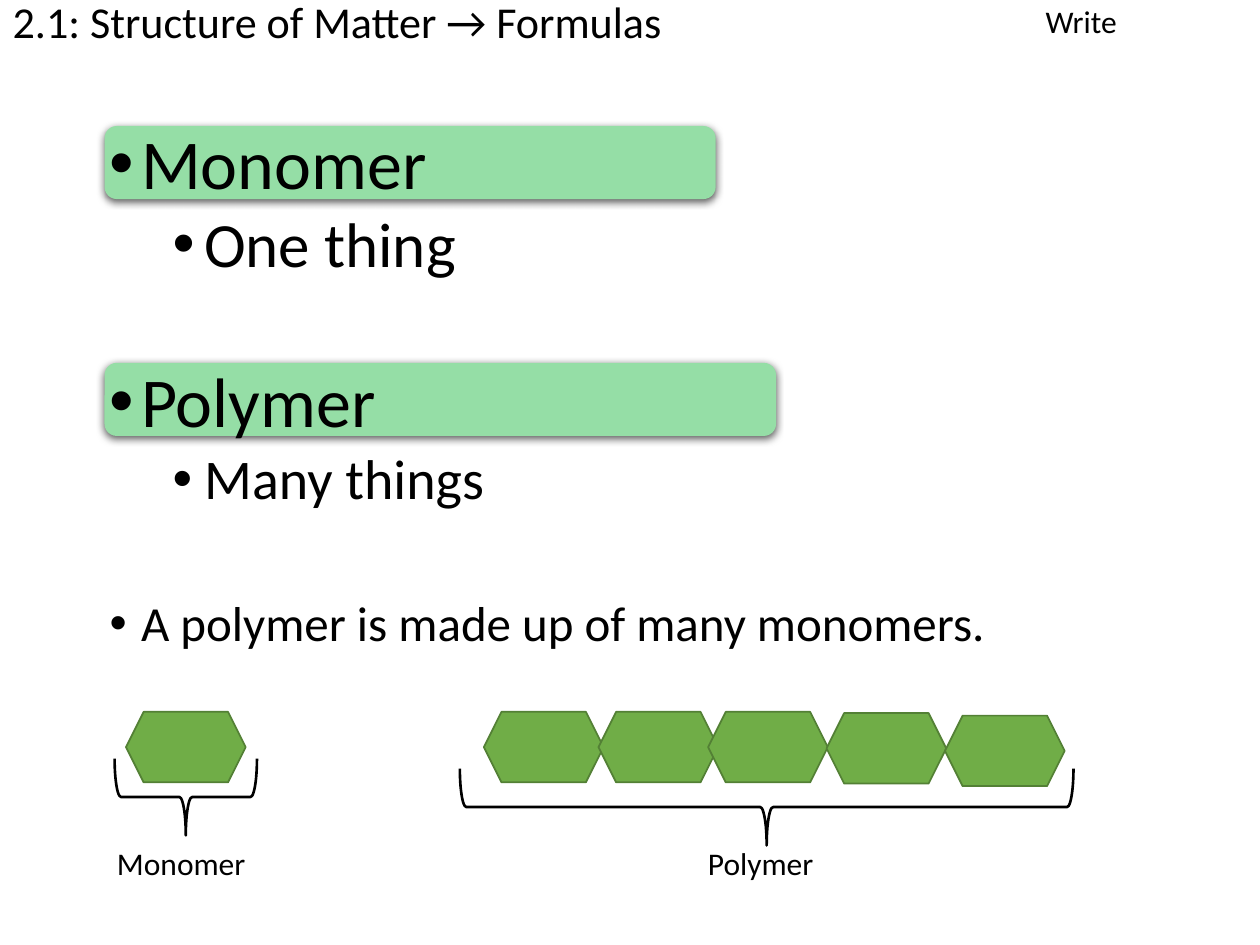
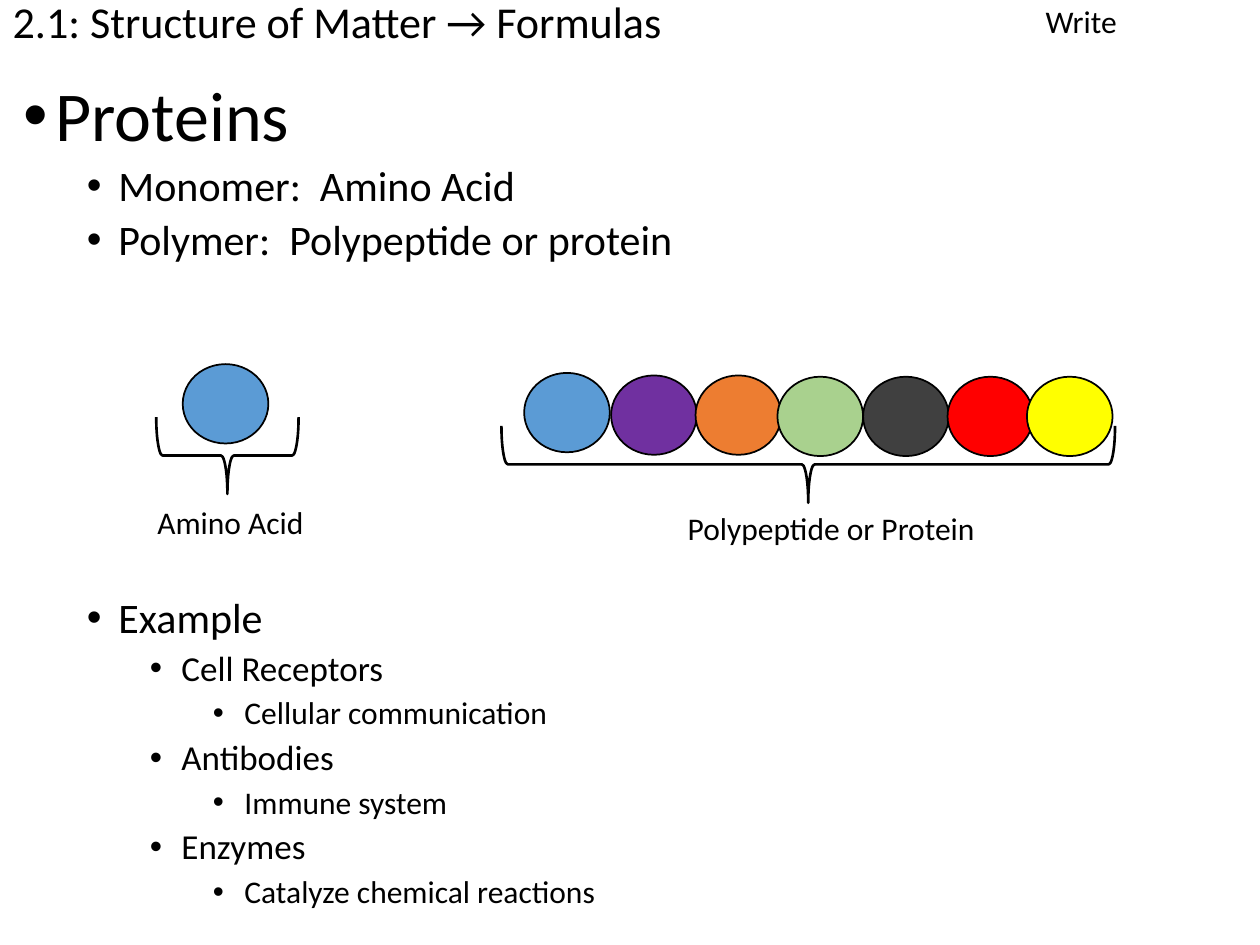
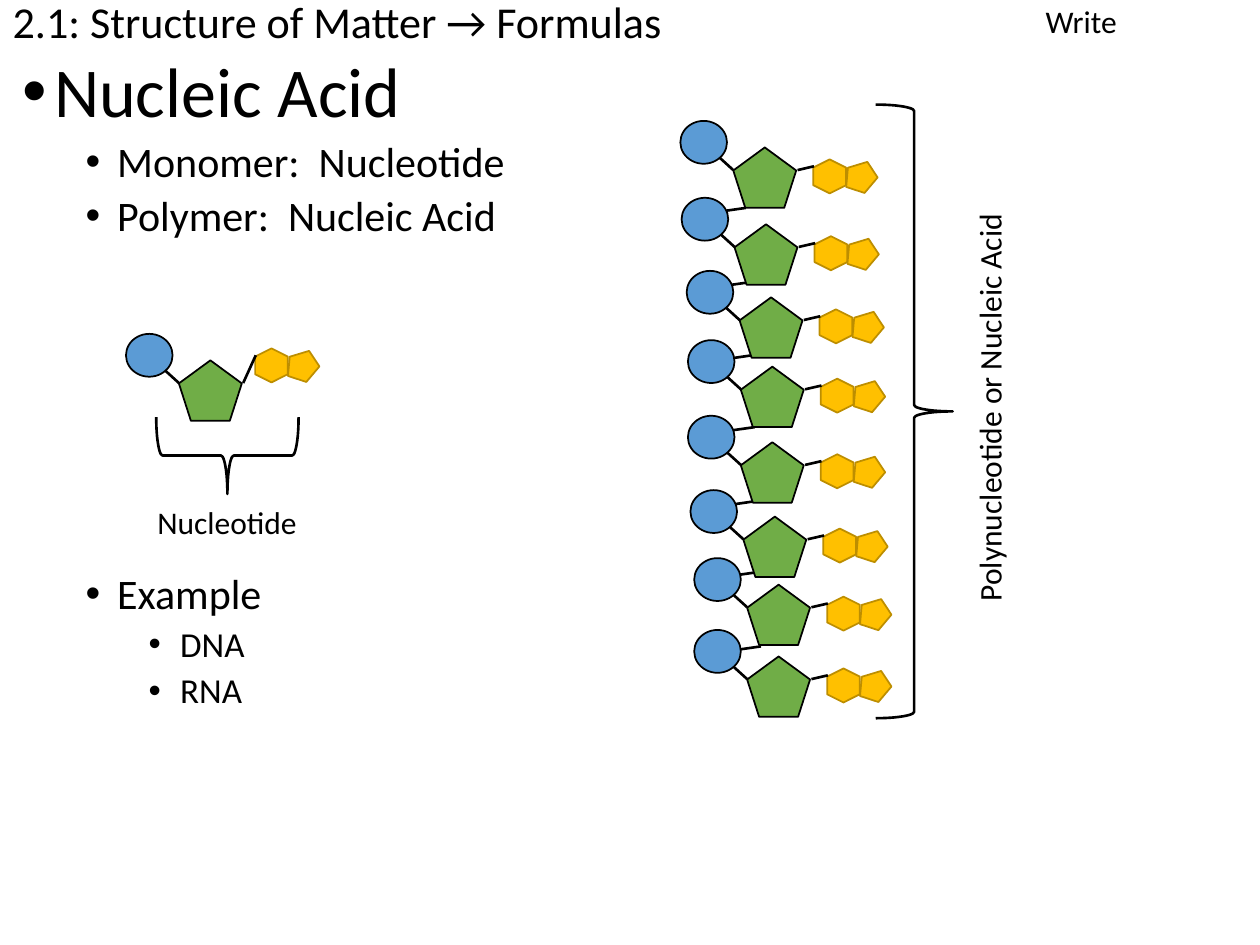
from lxml import etree
from pptx import Presentation
from pptx import util as u
from pptx.dml.color import RGBColor
from pptx.enum import shapes, text
from pptx.oxml import ns

# Shared style: 100 px to the inch
PX = 9144
FONT = "Calibri"
BLACK, MINT, GREEN, DARK_GREEN = "000000", "95DEA6", "70AD47", "538035"
BLUE, GOLD, DARK_GOLD = "5B9BD5", "FFC000", "BD8E00"
SHAPE = shapes.MSO_SHAPE
TITLE = "2.1: Structure of Matter → Formulas"
TITLE_BOX = (0, 0, 862, 38)
NOTE, NOTE_BOX = "Write", (820, -3, 227, 40)

# Lists: level, size, text, space before
BODIES = [
    ((77, 97, 891, 640), [
        (0, 40, "Monomer", 10),
        (1, 36, "One thing", 5),
        (0, 40, "Polymer", 49),
        (1, 32, "Many things", 5),
        (0, 28, "A polymer is made up of many monomers.", 50),
    ]),
    ((9, 59, 959, 678), [
        (0, 40, "Proteins", 10),
        (1, 24, "Monomer:  Amino Acid", 5),
        (1, 24, "Polymer:  Polypeptide or protein", 5),
        (1, 24, "Example", 190),
        (2, 20, "Cell Receptors", 5),
        (3, 18, "Cellular communication", 5),
        (2, 20, "Antibodies", 5),
        (3, 18, "Immune system", 5),
        (2, 20, "Enzymes", 5),
        (3, 18, "Catalyze chemical reactions", 5),
    ]),
    ((8, 40, 959, 678), [
        (0, 40, "Nucleic Acid", 10),
        (1, 24, "Monomer:  Nucleotide", 5),
        (1, 24, "Polymer:  Nucleic Acid", 5),
        (1, 24, "Example", 190),
        (2, 20, "DNA", 5),
        (2, 20, "RNA", 5),
    ]),
]

# Braces and their labels: box, rotation
BRACES = [
    [((117, 576, 61, 113), 270), ((578, 397, 61, 487), 270)],
    [((150, 305, 61, 113), 270), ((611, 125, 61, 487), 270)],
    [((150, 305, 61, 113), 270), ((695, 83, 61, 487), 180)],
]
LABELS = [
    [("Monomer", (83, 665, 178, 40), 0), ("Polymer", (552, 665, 178, 40), 0)],
    [("Amino Acid", (115, 394, 199, 40), 0),
     ("Polypeptide or Protein", (536, 399, 279, 40), 0)],
    [("Nucleotide", (115, 394, 199, 40), 0),
     ("Polynucleotide or Nucleic Acid", (607, 289, 356, 40), 270)],
]

# Diagram parts
HIGHLIGHTS = [(83, 288, 533, 58), (83, 100, 485, 58)]
HEXAGONS = [(100, 565), (384, 565), (475, 565), (562, 565), (656, 566), (750, 568)]
AMINO_ACIDS = [
    (145, 289, BLUE), (416, 296, BLUE), (485, 298, "7030A0"), (552, 298, "ED7D31"),
    (617, 299, "A9D18E"), (685, 299, "404040"), (752, 299, "FF0000"), (815, 299, "FFFF00"),
]
NUCLEOTIDES = [(540, 96), (541, 157), (545, 215), (546, 270),
               (546, 330), (548, 389), (551, 443), (551, 500)]
CHAIN_LINKS = [(592, 165), (595, 224), (597, 282), (599, 339),
               (605, 397), (602, 454), (604, 513)]


def color(value):
    return RGBColor.from_string(value)


def emu(lengths):
    return [u.Emu(length * PX) for length in lengths]


def place(shape, box):
    shape.left, shape.top, shape.width, shape.height = emu(box)


def write(paragraph, words, size=18, spacing=None, before=None):
    run = paragraph.add_run()
    run.text = words
    run.font.name, run.font.size = FONT, u.Pt(size)
    run.font.color.rgb = color(BLACK)
    if spacing:
        paragraph.line_spacing = spacing
    if before is not None:
        paragraph.space_before = u.Pt(before)


def set_bullet(paragraph, level):
    paragraph.level = level
    properties = paragraph._p.get_or_add_pPr()
    properties.set("marL", str((25 + 50 * level) * PX))
    properties.set("indent", str(-25 * PX))
    etree.SubElement(properties, ns.qn("a:buChar")).set("char", "•")


def add_label(slide, words, box, rotation=0):
    label = slide.shapes.add_textbox(*emu(box))
    label.rotation = rotation
    label.text_frame.word_wrap = True
    label.text_frame.auto_size = text.MSO_AUTO_SIZE.SHAPE_TO_FIT_TEXT
    write(label.text_frame.paragraphs[0], words)


def add_figure(parent, kind, box, fill=None, line=BLACK, width=1, rotation=0):
    shape = parent.shapes.add_shape(kind, *emu(box))
    shape.shadow.inherit = False
    shape.rotation = rotation
    if fill:
        shape.fill.solid()
        shape.fill.fore_color.rgb = color(fill)
    else:
        shape.fill.background()
    if line:
        shape.line.color.rgb = color(line)
        shape.line.width = u.Pt(width)
    else:
        shape.line.fill.background()
    return shape


def add_line(parent, start, end):
    line = parent.shapes.add_connector(shapes.MSO_CONNECTOR.STRAIGHT, *emu(start + end))
    line.line.color.rgb = color(BLACK)
    line.line.width = u.Pt(1.5)
    etree.SubElement(line.element.spPr, ns.qn("a:effectLst"))


def add_soft_shadow(shape):
    effects = shape.element.spPr.find(ns.qn("a:effectLst"))
    shadow = etree.SubElement(effects, ns.qn("a:outerShdw"), blurRad=str(u.Pt(4.5)),
                              dist=str(u.Pt(1.5)), dir="5400000", rotWithShape="0")
    shade = etree.SubElement(shadow, ns.qn("a:srgbClr"), val=BLACK)
    etree.SubElement(shade, ns.qn("a:alpha"), val="63000")


def add_nucleotide(slide, x, y, base=(105, 31)):
    """Phosphate, sugar and two-ring base; base is the offset of the first ring."""
    group = slide.shapes.add_group_shape()
    base_x, base_y = x + base[0], y + base[1]
    add_figure(group, SHAPE.OVAL, (x, y, 37, 34), BLUE)
    add_figure(group, SHAPE.REGULAR_PENTAGON, (x + 42, y + 21, 50, 48), GREEN)
    add_figure(group, SHAPE.HEXAGON, (base_x, base_y, 27, 26), GOLD, DARK_GOLD, rotation=270)
    add_figure(group, SHAPE.REGULAR_PENTAGON, (base_x + 25, base_y + 2, 24, 25),
               GOLD, DARK_GOLD, rotation=236.6)
    add_line(group, (x + 31, y + 29), (x + 42, y + 39))
    add_line(group, (x + 93, y + 39), (base_x + 1, base_y + 5))


def add_base_slide(presentation, body_box, items):
    slide = presentation.slides.add_slide(presentation.slide_layouts[1])
    title, body = slide.shapes.title, slide.placeholders[1]
    place(title, TITLE_BOX)
    title.text_frame.auto_size = text.MSO_AUTO_SIZE.NONE
    title.text_frame.vertical_anchor = text.MSO_ANCHOR.MIDDLE
    heading = title.text_frame.paragraphs[0]
    heading.alignment = text.PP_ALIGN.LEFT
    write(heading, TITLE, size=25.2, spacing=0.9)

    place(body, body_box)
    frame = body.text_frame
    frame.auto_size = text.MSO_AUTO_SIZE.NONE
    for index, (level, size, words, before) in enumerate(items):
        paragraph = frame.add_paragraph() if index else frame.paragraphs[0]
        write(paragraph, words, size=size, spacing=0.9, before=before)
        set_bullet(paragraph, level)
    add_label(slide, NOTE, NOTE_BOX)
    return slide


def draw_monomers(slide):
    for box in HIGHLIGHTS:
        highlight = add_figure(slide, SHAPE.ROUNDED_RECTANGLE, box, MINT, line=None)
        add_soft_shadow(highlight)
        slide.shapes.title.element.addprevious(highlight.element)
    for x, y in HEXAGONS:
        add_figure(slide, SHAPE.HEXAGON, (x, y, 95, 56), GREEN, DARK_GREEN)


def draw_proteins(slide):
    for x, y, fill in AMINO_ACIDS:
        add_figure(slide, SHAPE.OVAL, (x, y, 68, 63), fill)


def draw_nucleic_acid(slide):
    add_nucleotide(slide, 100, 265, base=(102, 12))
    for x, y in CHAIN_LINKS:
        add_line(slide, (x, y), (x - 21, y + 3))
    for x, y in NUCLEOTIDES:
        add_nucleotide(slide, x, y)


def main():
    presentation = Presentation()
    presentation.slide_width, presentation.slide_height = emu((1000, 750))
    drawings = (draw_monomers, draw_proteins, draw_nucleic_acid)
    for (box, items), braces, labels, draw in zip(BODIES, BRACES, LABELS, drawings):
        slide = add_base_slide(presentation, box, items)
        for brace_box, rotation in braces:
            add_figure(slide, SHAPE.LEFT_BRACE, brace_box, width=1.5, rotation=rotation)
        for label in labels:
            add_label(slide, *label)
        draw(slide)
    presentation.save("out.pptx")


if __name__ == "__main__":
    main()
